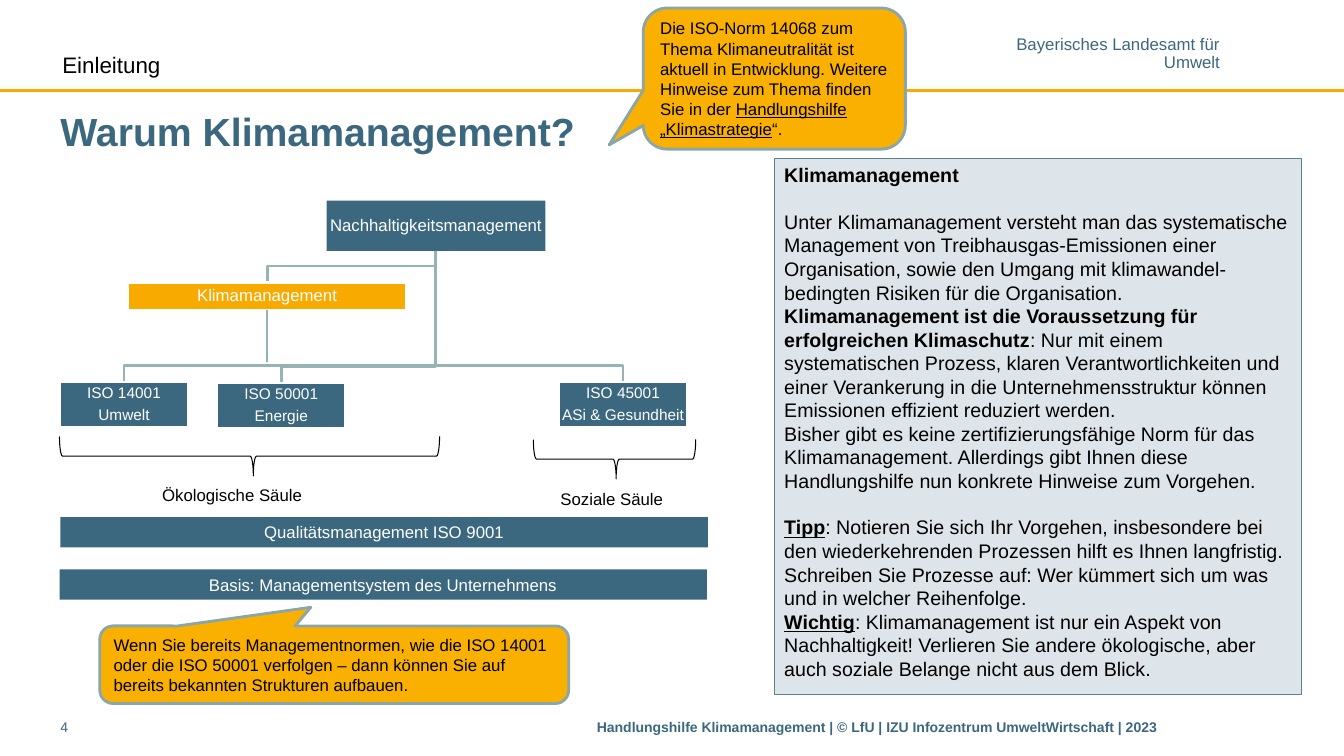
from dataclasses import dataclass
from lxml import etree
from pptx import Presentation
from pptx import util as u
from pptx.dml.color import RGBColor
from pptx.enum import shapes, text
from pptx.oxml import ns

# Content: a paragraph is a list of (text, style) spans; styles are b(old), u(nderlined)
TITLE = "Warum Klimamanagement?"
FOOTER = "Handlungshilfe Klimamanagement | © LfU | IZU\u00a0Infozentrum UmweltWirtschaft | 2023"
PANEL = [
    [("Klimamanagement", "b")],
    [("Unter Klimamanagement versteht man das systematische Management von "
      "Treibhausgas-Emissionen einer Organisation, sowie den Umgang mit "
      "klimawandel-bedingten Risiken für die Organisation.", "")],
    [("Klimamanagement ist die Voraussetzung für erfolgreichen Klimaschutz", "b"),
     (": Nur mit einem systematischen Prozess, klaren Verantwortlichkeiten und einer "
      "Verankerung in die Unternehmensstruktur können Emissionen effizient reduziert "
      "werden.", "")],
    [("Bisher gibt es keine zertifizierungsfähige Norm für das Klimamanagement. Allerdings "
      "gibt Ihnen diese Handlungshilfe nun konkrete Hinweise zum Vorgehen.", "")],
    [("Tipp", "bu"),
     (": Notieren Sie sich Ihr Vorgehen, insbesondere bei den wiederkehrenden Prozessen "
      "hilft es Ihnen langfristig. Schreiben Sie Prozesse auf: Wer kümmert sich um was "
      "und in welcher Reihenfolge.", "")],
    [("Wichtig", "bu"),
     (": Klimamanagement ist nur ein Aspekt von Nachhaltigkeit! Verlieren Sie andere "
      "ökologische, aber auch soziale Belange nicht aus dem Blick.", "")],
]
PANEL_GAPS = {1: 16.5, 4: 16.5}  # paragraph index: points before
CALLOUTS = [  # place, adjustments, paragraphs
    ((99, 621, 465, 77), (-0.05, -0.74, 0.17),
     [[("Wenn Sie bereits Managementnormen, wie die ISO 14001 oder die ISO 50001 verfolgen – "
        "dann können Sie auf bereits bekannten Strukturen aufbauen.", "")]]),
    ((638, 8, 260, 140), (-0.63, 0.47, 0.17),
     [[("Die ISO-Norm 14068 zum Thema Klimaneutralität ist aktuell in Entwicklung. Weitere "
        "Hinweise zum Thema finden Sie in der ", ""),
       ("Handlungshilfe „Klimastrategie", "u"), ("“.", "")]]),
]
ROOT = ("Nachhaltigkeitsmanagement", (324, 199, 217, 50))
CLIMATE = ("Klimamanagement", (127, 280, 276, 28))
STANDARDS = [  # lines, left, top
    (("ISO 14001", "Umwelt"), 59, 379),
    (("ISO 50001", "Energie"), 215, 380),
    (("ISO 45001", "ASi & Gesundheit"), 554, 379),
]
PILLARS = [  # label, label place, brace left, brace top, brace span
    ("Ökologische Säule", (151, 476, 283, 30), 59, 433, 377),
    ("Soziale Säule", (546, 480, 191, 30), 529, 436, 161),
]
BARS = [("Qualitätsmanagement ISO 9001", 60, 513),
        ("Basis: Managementsystem des Unternehmens", 59, 565)]


@dataclass(frozen=True)
class Theme:
    font: str = "Arial"
    blue: str = "3B687F"
    amber: str = "F9AA00"
    callout: str = "F9B000"
    callout_edge: str = "8AA6A8"
    panel: str = "DEE5EA"
    panel_edge: str = "5C8395"
    tree: str = "96B3B6"
    stem: str = "94B2B5"
    white: str = "FFFFFF"
    black: str = "000000"
    title: int = 28
    section: int = 16
    body: int = 14
    label: int = 12
    node: int = 11
    foot: int = 10


THEME = Theme()
PX = 9144  # 100 px to the inch
ALIGN, ANCHOR = text.PP_ALIGN, text.MSO_ANCHOR
SHAPE = shapes.MSO_SHAPE


def px(*lengths):
    return [u.Emu(length * PX) for length in lengths]


def colour(code):
    return RGBColor.from_string(code)


def plain(*lines):
    return [[(line, "")] for line in lines]


def write(box, paragraphs, size, ink, align=ALIGN.LEFT, anchor=ANCHOR.TOP,
          inset=(10, 5), spacing=None, gaps=None, wrap=True):
    frame = box.text_frame
    frame.auto_size = text.MSO_AUTO_SIZE.NONE
    frame.word_wrap = wrap
    frame.vertical_anchor = anchor
    frame.margin_left, frame.margin_top = px(*inset)
    frame.margin_right, frame.margin_bottom = px(*inset)
    for index, spans in enumerate(paragraphs):
        para = frame.add_paragraph() if index else frame.paragraphs[0]
        para.alignment = align
        if spacing:
            para.line_spacing = spacing
        if gaps and index in gaps:
            para.space_before = u.Pt(gaps[index])
        for words, style in spans:
            span = para.add_run()
            span.text = words
            span.font.name, span.font.size = THEME.font, u.Pt(size)
            span.font.color.rgb = colour(ink)
            span.font.bold = "b" in style
            span.font.underline = "u" in style


def stroke(line, code, width):
    line.color.rgb = colour(code)
    line.width = u.Pt(width)


def add_shape(page, kind, place, fill, edge=None, width=1, adjustments=()):
    shape = page.shapes.add_shape(kind, *px(*place))
    shape.shadow.inherit = False
    shape.fill.solid()
    shape.fill.fore_color.rgb = colour(fill)
    if edge:
        stroke(shape.line, edge, width)
    else:
        shape.line.fill.background()
    for index, value in enumerate(adjustments):
        shape.adjustments[index] = value
    return shape


def add_label(page, place, paragraphs, size, ink, **options):
    write(page.shapes.add_textbox(*px(*place)), paragraphs, size, ink, **options)


def add_line(page, start, end, code, width):
    line = page.shapes.add_connector(shapes.MSO_CONNECTOR.STRAIGHT, *px(*start, *end))
    stroke(line.line, code, width)
    etree.SubElement(line._element.spPr, ns.qn("a:effectLst"))
    return line


def add_branch(page, place):
    """Draw the bent line from the bottom of the root to the top of a node."""
    left, top, width, _ = place
    root_left, root_top, root_width, root_height = ROOT[1]
    start_x, start_y = root_left + root_width // 2, root_top + root_height
    end_x, bend = left + width // 2, top - 16
    builder = page.shapes.build_freeform(start_x, start_y, scale=PX)
    builder.add_line_segments([(start_x, bend), (end_x, bend), (end_x, top)], close=False)
    branch = builder.convert_to_shape()
    branch.shadow.inherit = False
    branch.fill.background()
    stroke(branch.line, THEME.tree, 2)


def add_node(page, lines, place, fill, size, edge=None):
    node = add_shape(page, SHAPE.RECTANGLE, place, fill, edge, 2)
    write(node, plain(*lines), size, THEME.white, align=ALIGN.CENTER,
          anchor=ANCHOR.MIDDLE, inset=(1, 1), spacing=0.9, gaps={1: 4})
    return node


def add_frame(page):
    add_line(page, (0, 90), (1333, 90), THEME.amber, 2)
    add_label(page, (1007, 37, 203, 34), plain("Bayerisches Landesamt für", "Umwelt"),
              THEME.label, THEME.blue, align=ALIGN.RIGHT, inset=(0, 0), spacing=0.85,
              wrap=False)
    add_label(page, (52, 46, 167, 37), plain("Einleitung"), THEME.section, THEME.black)
    add_label(page, (592, 708, 699, 31), [[(FOOTER, "b")]], THEME.foot, THEME.blue,
              inset=(0, 5))
    add_label(page, (60, 708, 70, 31), plain("4"), THEME.foot, THEME.blue, inset=(0, 5))
    title = page.shapes.title
    title.left, title.top, title.width, title.height = px(60, 102, 1231, 55)
    write(title, [[(TITLE, "b")]], THEME.title, THEME.blue, anchor=ANCHOR.MIDDLE,
          inset=(0, 5))


def add_tree(page):
    standards = [(lines, (left, top, 128, 45)) for lines, left, top in STANDARDS]
    for place in [CLIMATE[1]] + [place for _, place in standards]:
        add_branch(page, place)
    add_node(page, ROOT[:1], ROOT[1], THEME.blue, THEME.label)
    climate = add_node(page, CLIMATE[:1], CLIMATE[1], THEME.amber, THEME.label, THEME.white)
    for lines, place in standards:
        add_node(page, lines, place, THEME.blue, THEME.node, THEME.white)
    stem = add_line(page, (265, 308), (265, 359), THEME.stem, 1.5)
    stem.begin_connect(climate, 2)


def add_pillars(page):
    depth = 39
    for label, place, left, top, span in PILLARS:
        # The brace is turned about its centre, so its upright place is offset
        shift = (span - depth) // 2
        brace = add_shape(page, SHAPE.LEFT_BRACE, (left + shift, top - shift, depth, span),
                          THEME.white, THEME.black, 0.75, (0.08, 0.51))
        brace.rotation = 270
        add_label(page, place, plain(label), THEME.label, THEME.black)
    for label, left, top in BARS:
        bar = add_shape(page, SHAPE.RECTANGLE, (left, top, 642, 30), THEME.blue)
        write(bar, plain(label), THEME.label, THEME.white, align=ALIGN.CENTER)


def main():
    deck = Presentation()
    deck.slide_width, deck.slide_height = px(1333, 750)
    page = deck.slides.add_slide(deck.slide_layouts[5])
    add_frame(page)
    for place, adjustments, paragraphs in CALLOUTS:
        callout = add_shape(page, SHAPE.ROUNDED_RECTANGULAR_CALLOUT, place, THEME.callout,
                            THEME.callout_edge, 2, adjustments)
        write(callout, paragraphs, THEME.label, THEME.black, anchor=ANCHOR.MIDDLE)
    panel = add_shape(page, SHAPE.RECTANGLE, (768, 157, 523, 532), THEME.panel,
                      THEME.panel_edge)
    write(panel, PANEL, THEME.body, THEME.black, gaps=PANEL_GAPS)
    add_tree(page)
    add_pillars(page)
    deck.save("out.pptx")


if __name__ == "__main__":
    main()
